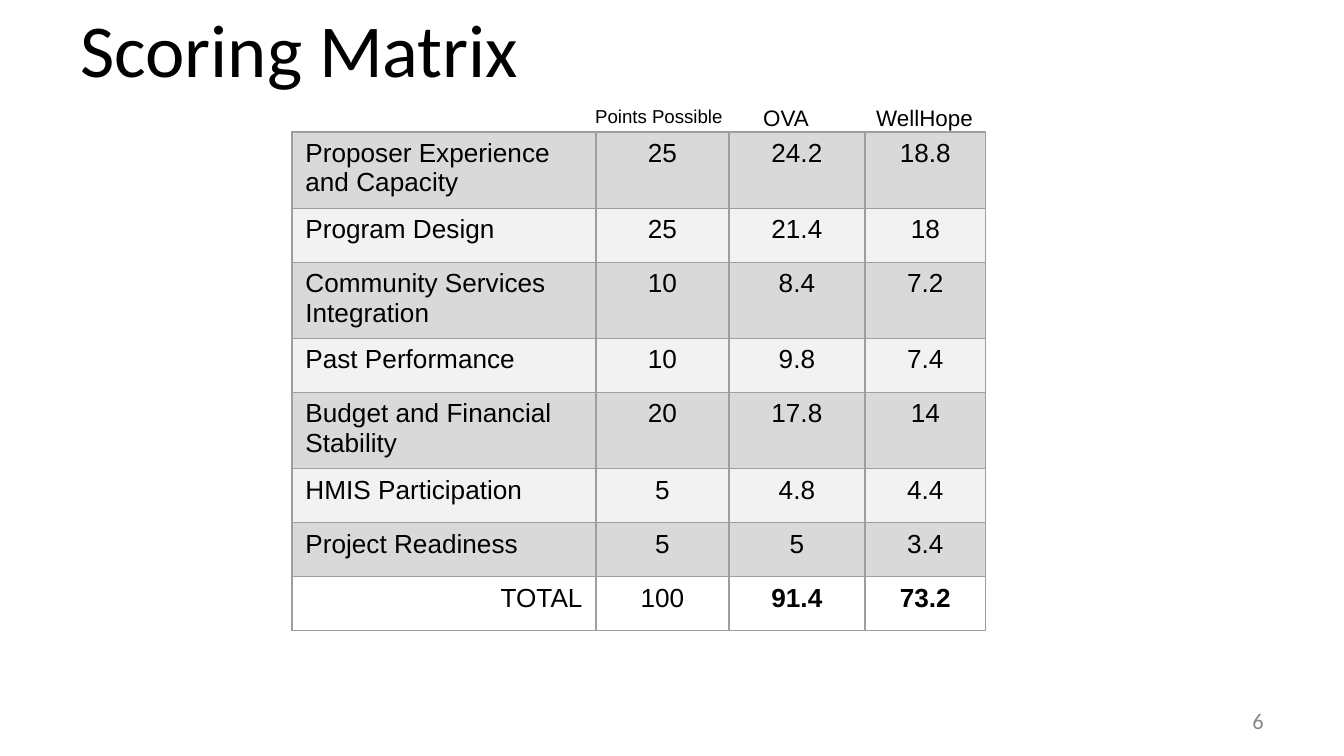
"""Build the scoring matrix slide."""
from dataclasses import dataclass

from lxml.etree import SubElement
from pptx import Presentation
from pptx.dml.color import RGBColor as RGB
from pptx.enum.text import MSO_ANCHOR as Anchor, PP_ALIGN as Align
from pptx.oxml.ns import qn
from pptx.util import Pt

EMU_PER_PX = 914400 / 134.4


@dataclass(frozen=True)
class Theme:
    ink: str = "000000"
    muted: str = "888888"
    border: str = "9E9E9E"
    bands: tuple = ("D9D9D9", "F2F2F2")
    head: str = "Calibri"
    body: str = "Arial"
    title: int = 40
    cell: int = 14
    label: int = 12
    small: int = 10
    border_width: float = 0.75


THEME = Theme()


def px(n):
    return round(n * EMU_PER_PX)


def write(tf, text, size=THEME.cell, font=THEME.body, color=THEME.ink,
          align=Align.LEFT, bold=False):
    p = tf.paragraphs[0]
    p.alignment = align
    r = p.add_run()
    r.text = text
    r.font.size = Pt(size)
    r.font.name = font
    r.font.bold = bold
    r.font.color.rgb = RGB.from_string(color)


class Deck:
    def __init__(self, theme, width, height):
        self.theme = theme
        self.prs = Presentation()
        self.prs.slide_width, self.prs.slide_height = px(width), px(height)
        self.s = self.prs.slides.add_slide(self.prs.slide_layouts[6])

    def text(self, box, text, anchor=Anchor.TOP, **fmt):
        tf = self.s.shapes.add_textbox(*map(px, box)).text_frame
        tf.word_wrap = True
        tf.vertical_anchor = anchor
        write(tf, text, **fmt)

    def border(self, cell):
        tc_pr = cell._tc.get_or_add_tcPr()
        for side in ("a:lnL", "a:lnR", "a:lnT", "a:lnB"):
            ln = SubElement(tc_pr, qn(side), w=str(Pt(self.theme.border_width)))
            fill = SubElement(ln, qn("a:solidFill"))
            SubElement(fill, qn("a:srgbClr"), val=self.theme.border)

    def table(self, left, top, widths, row_height, rows):
        size = (sum(widths), row_height * len(rows))
        tbl = self.s.shapes.add_table(
            len(rows), len(widths), *map(px, (left, top, *size))).table
        tbl.first_row = tbl.horz_banding = False
        for col, width in zip(tbl.columns, widths):
            col.width = px(width)
        for i, row in enumerate(rows):
            total = i == len(rows) - 1
            for j, value in enumerate(row):
                cell = tbl.cell(i, j)
                self.border(cell)
                if total:
                    cell.fill.background()
                else:
                    cell.fill.solid()
                    band = self.theme.bands[i % 2]
                    cell.fill.fore_color.rgb = RGB.from_string(band)
                name_align = Align.RIGHT if total else Align.LEFT
                write(cell.text_frame, value,
                      align=Align.CENTER if j else name_align,
                      bold=total and j > 1)


ROWS = [
    ("Proposer Experience and Capacity", "25", "24.2", "18.8"),
    ("Program Design", "25", "21.4", "18"),
    ("Community Services Integration", "10", "8.4", "7.2"),
    ("Past Performance", "10", "9.8", "7.4"),
    ("Budget and Financial Stability", "20", "17.8", "14"),
    ("HMIS Participation", "5", "4.8", "4.4"),
    ("Project Readiness", "5", "5", "3.4"),
    ("TOTAL", "100", "91.4", "73.2"),
]


def main():
    t = THEME
    deck = Deck(t, 1344, 756)
    deck.text((67, 20, 1210, 56), "Scoring Matrix", anchor=Anchor.MIDDLE,
              size=t.title, font=t.head)
    deck.text((964, 701, 313, 40), "6", anchor=Anchor.MIDDLE, size=t.label,
              font=t.head, color=t.muted, align=Align.RIGHT)
    deck.table(292, 132, (304, 133, 136, 121), 54, ROWS)
    for left, width, name, size in (
        (750, 101, "OVA", t.label),
        (863, 134, "WellHope", t.label),
        (582, 157, "Points Possible", t.small),
    ):
        deck.text((left, 98, width, 40), name, size=size)
    deck.prs.save("out.pptx")


if __name__ == "__main__":
    main()
